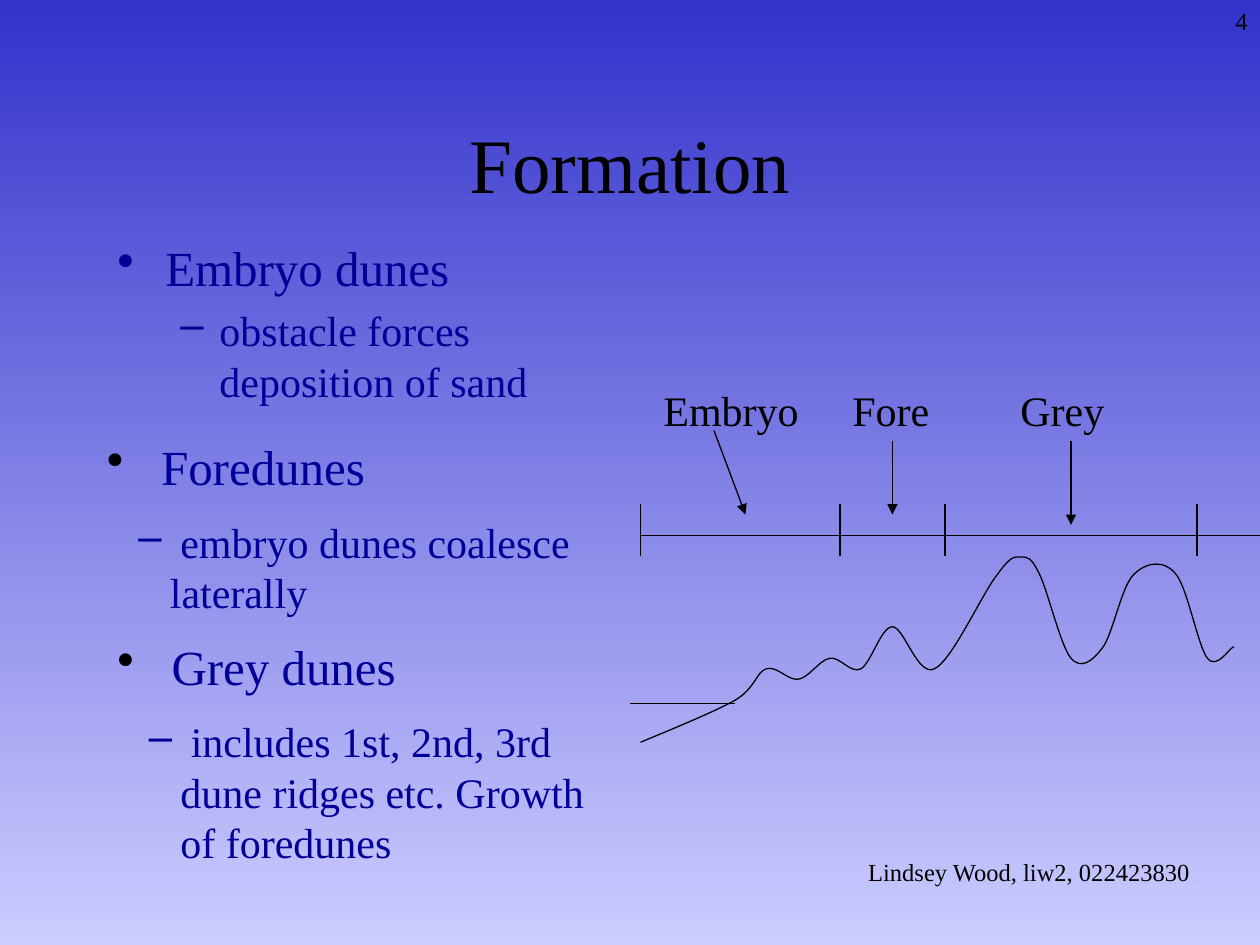
from pptx import Presentation
from pptx.dml.color import RGBColor
from pptx.enum.shapes import MSO_CONNECTOR
from pptx.enum.text import MSO_ANCHOR, PP_ALIGN
from pptx.oxml.ns import qn
from pptx.util import Inches, Pt
from lxml.etree import SubElement

# The slide is a grid of 120 columns by 90 rows
COLS, ROWS = 120, 90
UNIT = Inches(10) / COLS
FONT = "Times New Roman"
BLACK = RGBColor(0x00, 0x00, 0x00)
NAVY = RGBColor(0x00, 0x00, 0x99)
SKY_TOP = RGBColor(0x33, 0x33, 0xCC)
SKY_BOTTOM = RGBColor(0xCC, 0xCC, 0xFF)

# Dune profile in grid units: start, then (control, control, end) per curve
PROFILE_START = (1, 34.7)
PROFILE = [
    ((4.6, 33.2), (8, 31.8), (10, 30.7)),
    ((12, 29.5), (12, 28), (13, 27.7)),
    ((14, 27.4), (15, 28.8), (16, 28.7)),
    ((17, 28.6), (18, 26.9), (19, 26.7)),
    ((20, 26.5), (21, 28.2), (22, 27.7)),
    ((23, 27.1), (23.9, 23.7), (25, 23.7)),
    ((26.1, 23.7), (27.4, 28.5), (29, 27.7)),
    ((30.7, 26.9), (33.6, 20.4), (35, 18.7)),
    ((36.3, 16.9), (36.6, 17.05), (37.2, 17.05)),
    ((37.9, 17.05), (38.2, 17.05), (39, 18.7)),
    ((39.8, 20.3), (41, 25.5), (42, 26.7)),
    ((43, 27.8), (44, 27), (45, 25.7)),
    ((46, 24.4), (46.8, 19.8), (48, 18.7)),
    ((49.2, 17.5), (50.9, 17.3), (52, 18.7)),
    ((53.1, 20), (54.1, 25.6), (55, 26.7)),
    ((55.9, 27.8), (57, 25.8), (57.5, 25.6)),
]


def grid(n):
    return round(n * UNIT)


def add_paragraph(tf, text, size=24, color=BLACK, align=PP_ALIGN.LEFT,
                  bullet=None, bullet_color=None, margin=0, hang=0, before=0):
    first = not tf.paragraphs[0].runs
    p = tf.paragraphs[0] if first else tf.add_paragraph()
    p.alignment = align
    p.space_before = Pt(0 if first else before)
    if bullet:
        pPr = p._p.get_or_add_pPr()
        pPr.set("marL", str(Inches(margin)))
        pPr.set("indent", str(-Inches(hang)))
        clr = SubElement(SubElement(pPr, qn("a:buClr")), qn("a:srgbClr"))
        clr.set("val", str(bullet_color or color))
        SubElement(pPr, qn("a:buChar")).set("char", bullet)
    r = p.add_run()
    r.text = text
    r.font.name, r.font.size = FONT, Pt(size)
    r.font.color.rgb = color


def add_box(s, x, y, w, h, anchor=MSO_ANCHOR.TOP):
    tf = s.shapes.add_textbox(*map(grid, (x, y, w, h))).text_frame
    tf.word_wrap = True
    tf.vertical_anchor = anchor
    return tf


def add_line(s, x1, y1, x2, y2, arrow=False):
    line = s.shapes.add_connector(MSO_CONNECTOR.STRAIGHT,
                                  *map(grid, (x1, y1, x2, y2)))
    line.line.color.rgb = BLACK
    line.line.width = Pt(0.75)
    if arrow:
        SubElement(line.line._get_or_add_ln(), qn("a:tailEnd")).set("type", "triangle")
    SubElement(line._element.spPr, qn("a:effectLst"))


def add_dune_text(s, x, y, w, h, heading, detail, before, bullet_color,
                  heading_hang, detail_margin, detail_hang):
    tf = add_box(s, x, y, w, h)
    add_paragraph(tf, heading, size=28, color=NAVY, bullet="•",
                  bullet_color=bullet_color, margin=heading_hang, hang=heading_hang)
    add_paragraph(tf, detail, color=NAVY, bullet="–", margin=detail_margin,
                  hang=detail_hang, before=before)


def add_profile(s, x, y):
    def at(point):
        return grid(x + point[0]), grid(y + point[1])

    builder = s.shapes.build_freeform(*at(PROFILE_START))
    builder.add_line_segments([at(pt) for curve in PROFILE for pt in curve], close=False)
    sp = builder.convert_to_shape()
    # Turn every three line points into one Bézier curve
    path = sp._element.find(".//" + qn("a:path"))
    lines = path.findall(qn("a:lnTo"))
    for i in range(0, len(lines), 3):
        curve = SubElement(path, qn("a:cubicBezTo"))
        for ln in lines[i:i + 3]:
            curve.append(ln[0])
            path.remove(ln)
    sp.shadow.inherit = False
    sp.fill.background()
    sp.line.color.rgb = BLACK
    sp.line.width = Pt(0.75)


def add_diagram(s, x, y, w):
    add_profile(s, x, y)
    # Zone axis with its ticks, and the water level
    add_line(s, x + 1, y + 15, x + w, y + 15)
    for tick in (1, 20, 30, 54):
        add_line(s, x + tick, y + 17, x + tick, y + 12)
    add_line(s, x + 10, y + 31, x, y + 31)
    # Zone labels
    for text, left, width in (("Embryo", 2, 16), ("Fore", 20, 10), ("Grey", 36, 11)):
        add_paragraph(add_box(s, x + left, y, width, 6), text)
    # Arrows from labels to zones
    for x1, y1, x2, y2 in ((8, 5, 11, 13), (25, 6, 25, 13), (42, 6, 42, 14)):
        add_line(s, x + x1, y + y1, x + x2, y + y2, arrow=True)


def main():
    prs = Presentation()
    prs.slide_width, prs.slide_height = grid(COLS), grid(ROWS)
    s = prs.slides.add_slide(prs.slide_layouts[6])

    # Background
    fill = s.background.fill
    fill.gradient()
    fill.gradient_angle = 270
    for stop, color in zip(fill.gradient_stops, (SKY_TOP, SKY_BOTTOM)):
        stop.color.rgb = color

    # Footer, slide number and title
    add_paragraph(add_box(s, 79, 81, 38, 6), "Lindsey Wood, liw2, 022423830",
                  size=14, align=PP_ALIGN.CENTER)
    add_paragraph(add_box(s, 95, 0, 25, 6), "4", size=14, align=PP_ALIGN.RIGHT)
    add_paragraph(add_box(s, 9, 8, 102, 15, MSO_ANCHOR.MIDDLE), "Formation",
                  size=44, align=PP_ALIGN.CENTER)

    # Dune types
    add_dune_text(s, 10, 22, 50, 20, "Embryo dunes",
                  "obstacle forces deposition of sand", 5, NAVY, 0.38, 0.81, 0.31)
    for x, y, w, h, heading, detail in (
            (9, 41, 50, 19, "Foredunes", " embryo dunes coalesce laterally"),
            (10, 60, 49, 24, "Grey dunes",
             " includes 1st, 2nd, 3rd dune ridges etc. Growth of foredunes")):
        add_dune_text(s, x, y, w, h, heading, detail, 12, BLACK, 0.43, 0.5, 0.25)

    add_diagram(s, 60, 36, 60)
    prs.save("out.pptx")


if __name__ == "__main__":
    main()
